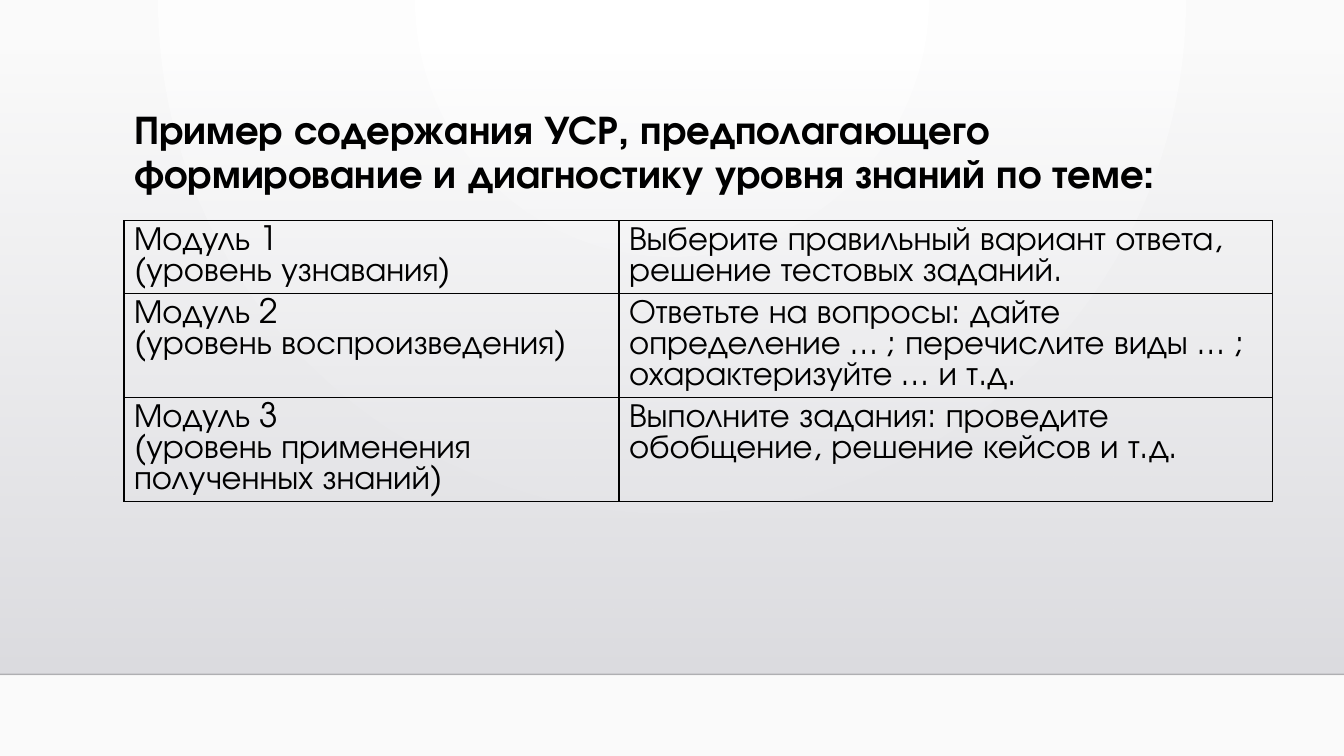
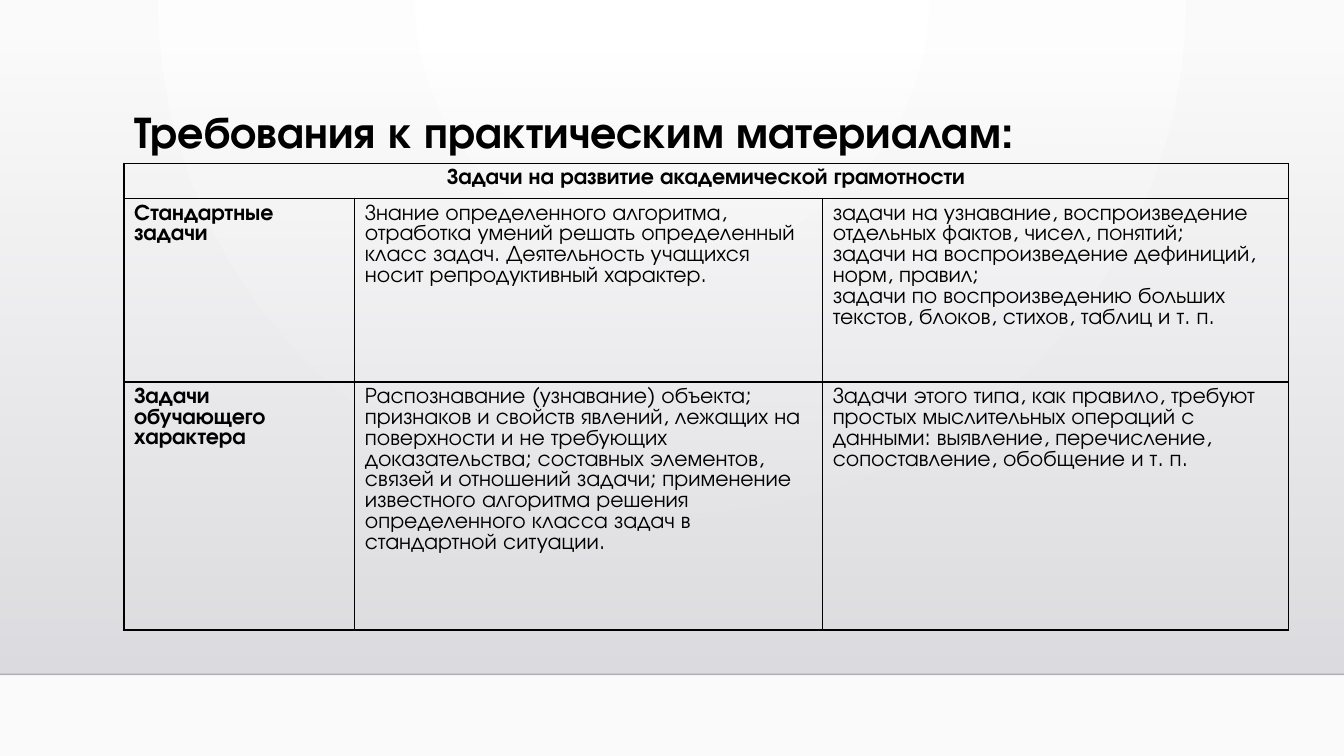
from lxml import etree
from pptx import Presentation
from pptx.dml.color import RGBColor
from pptx.enum.shapes import MSO_CONNECTOR, MSO_SHAPE
from pptx.enum.text import MSO_ANCHOR, MSO_AUTO_SIZE, PP_ALIGN
from pptx.oxml import parse_xml
from pptx.oxml.ns import nsdecls, qn
from pptx.util import Inches, Pt

LEFT, CENTER = PP_ALIGN.LEFT, PP_ALIGN.CENTER
TOP, NO_AUTOFIT = MSO_ANCHOR.TOP, MSO_AUTO_SIZE.NONE
RECTANGLE, STRAIGHT = MSO_SHAPE.RECTANGLE, MSO_CONNECTOR.STRAIGHT

FONT = "TeX Gyre Adventor"
COLORS = {
    "text": "000000",
    "center": "FFFFFF",
    "edge": "FAFAFA",
    "band_top": "DCDCE0",
    "band_bottom": "DEDEE2",
}
SLIDE_WIDTH = 13.33
BAND_TOP, BAND_HEIGHT = 0.51, 6.18
CONTENT_LEFT = 1.23

SLIDES = [
    {
        "title": "Пример содержания УСР, предполагающего формирование и диагностику уровня знаний по теме:",
        "title_size": 28.8,
        "table_top": 2.19,
        "text_size": 24,
        "columns": [4.91, 6.48],
        "row_heights": [0.72, 1.03, 1.03],
        "has_headings": False,
        "rows": [
            ["Модуль 1\n(уровень узнавания)",
             "Выберите правильный вариант ответа, решение тестовых заданий."],
            ["Модуль 2\n(уровень воспроизведения)",
             "Ответьте на вопросы: дайте определение … ; перечислите виды … ; "
             "охарактеризуйте … и т.д."],
            ["Модуль 3\n(уровень применения полученных знаний)",
             "Выполните задания: проведите обобщение, решение кейсов и т.д."],
        ],
    },
    {
        "title": "Требования к практическим материалам:",
        "title_size": 32,
        "table_top": 1.62,
        "text_size": 16,
        "columns": [2.29, 4.64, 4.62],
        "row_heights": [0.35, 1.82, 2.46],
        "has_headings": True,
        "rows": [
            ["Задачи на развитие академической грамотности"],
            ["Стандартные задачи",
             "Знание определенного алгоритма, отработка умений решать определенный "
             "класс задач. Деятельность учащихся носит репродуктивный характер.",
             "задачи на узнавание, воспроизведение отдельных фактов, чисел, понятий;\n"
             "задачи на воспроизведение дефиниций, норм, правил;\n"
             "задачи по воспроизведению больших текстов, блоков, стихов, таблиц и т. п."],
            ["Задачи обучающего характера",
             "Распознавание (узнавание) объекта; признаков и свойств явлений, лежащих на "
             "поверхности и не требующих доказательства; составных элементов, связей и "
             "отношений задачи; применение известного алгоритма решения определенного "
             "класса задач в стандартной ситуации.",
             "Задачи этого типа, как правило, требуют простых мыслительных операций с "
             "данными: выявление, перечисление, сопоставление, обобщение и т. п."],
        ],
    },
]


def write_text(text_frame, text, size, bold=False, align=LEFT, line_spacing=1.0):
    text_frame.word_wrap = True
    text_frame.text = text
    for paragraph in text_frame.paragraphs:
        paragraph.alignment = align
        paragraph.line_spacing = line_spacing
        paragraph.font.name = FONT
        paragraph.font.size = Pt(size)
        paragraph.font.bold = bold
        paragraph.font.color.rgb = RGBColor.from_string(COLORS["text"])


def add_borders(cell):
    """Draw a 1 pt line on all four sides of a table cell."""
    for side in ("lnL", "lnR", "lnT", "lnB"):
        cell._tc.get_or_add_tcPr().append(parse_xml(
            f'<a:{side} {nsdecls("a")} w="12700"><a:solidFill>'
            f'<a:srgbClr val="{COLORS["text"]}"/></a:solidFill></a:{side}>'))


presentation = Presentation()
presentation.slide_width = Inches(SLIDE_WIDTH)
presentation.slide_height = Inches(7.5)

# Radial background on the master
background_fill = presentation.slide_master.background.fill
background_fill.gradient()
background_fill.gradient_stops[0].color.rgb = RGBColor.from_string(COLORS["center"])
background_fill.gradient_stops[1].color.rgb = RGBColor.from_string(COLORS["edge"])
gradient = presentation.slide_master.element.find(".//" + qn("a:gradFill"))
gradient.replace(gradient.find(qn("a:lin")), parse_xml(
    f'<a:path {nsdecls("a")} path="circle">'
    '<a:fillToRect l="43000" t="0" r="43000" b="100000"/></a:path>'))

for content in SLIDES:
    slide = presentation.slides.add_slide(presentation.slide_layouts[5])
    title = slide.shapes.title

    # Band that fades in downwards, closed by a thin line
    band = slide.shapes.add_shape(
        RECTANGLE, 0, Inches(BAND_TOP), Inches(SLIDE_WIDTH), Inches(BAND_HEIGHT))
    band.shadow.inherit = False
    band.line.fill.background()
    band.fill.gradient()
    band.fill.gradient_angle = 270
    for stop, name in zip(band.fill.gradient_stops, ("band_top", "band_bottom")):
        stop.color.rgb = RGBColor.from_string(COLORS[name])
    first_color = band._element.spPr.find(".//" + qn("a:srgbClr"))
    etree.SubElement(first_color, qn("a:alpha")).set("val", "0")

    band_bottom = Inches(BAND_TOP + BAND_HEIGHT)
    floor_line = slide.shapes.add_connector(
        STRAIGHT, 0, band_bottom, Inches(SLIDE_WIDTH), band_bottom)
    floor_line.line.width = Pt(1)
    floor_line.line.color.rgb = RGBColor.from_string(COLORS["text"])
    line_properties = floor_line._element.spPr
    line_color = line_properties.find(".//" + qn("a:srgbClr"))
    etree.SubElement(line_color, qn("a:alpha")).set("val", "20000")
    etree.SubElement(line_properties, qn("a:effectLst"))

    for shape in (band, floor_line):
        title._element.addprevious(shape._element)

    title.left, title.top = Inches(CONTENT_LEFT), Inches(1.04)
    title.width, title.height = Inches(11.65), Inches(1.15)
    title.text_frame.vertical_anchor = TOP
    title.text_frame.auto_size = NO_AUTOFIT
    write_text(title.text_frame, content["title"], content["title_size"],
               bold=True, line_spacing=0.9)

    columns, row_heights = content["columns"], content["row_heights"]
    table = slide.shapes.add_table(
        len(row_heights), len(columns), Inches(CONTENT_LEFT), Inches(content["table_top"]),
        Inches(sum(columns)), Inches(sum(row_heights))).table
    table.first_row = table.horz_banding = False
    for column, width in zip(table.columns, columns):
        column.width = Inches(width)
    for row, height in zip(table.rows, row_heights):
        row.height = Inches(height)
    for cell in table.iter_cells():
        add_borders(cell)
        cell.fill.background()

    for row_index, texts in enumerate(content["rows"]):
        spans_table = len(texts) == 1
        if spans_table:
            table.cell(row_index, 0).merge(table.cell(row_index, len(columns) - 1))
        for column_index, text in enumerate(texts):
            write_text(table.cell(row_index, column_index).text_frame, text,
                       content["text_size"],
                       bold=content["has_headings"] and column_index == 0,
                       align=CENTER if spans_table else LEFT)

presentation.save("out.pptx")
